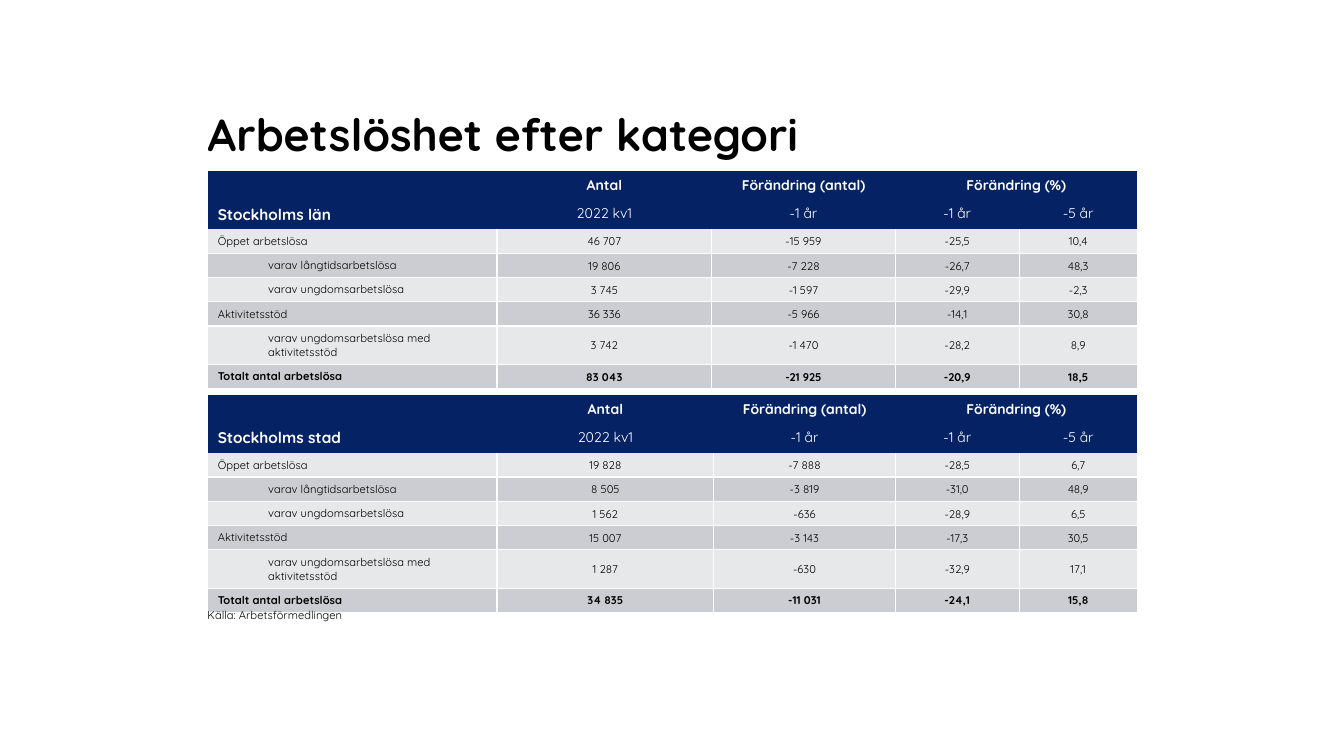
from lxml import etree
from pptx import Presentation
from pptx import util as u
from pptx.dml.color import RGBColor
from pptx.enum import text
from pptx.oxml.ns import qn

NAVY, PALE, GREY, WHITE, BLACK = "052364", "E7E8EA", "CCCDD3", "FFFFFF", "000000"
FONT = "Quicksand"
LEFT, WIDTH = 2.06, 9.22


def style(para, size, color, bold=False):
    for run in para.runs:
        run.font.name, run.font.size, run.font.bold = FONT, u.Pt(size), bold
        run.font.color.rgb = RGBColor.from_string(color)


def border(cell, sides):
    props = cell._tc.get_or_add_tcPr()
    for spot, side in enumerate(sides):
        line = etree.Element(qn("a:ln" + side), w="12700")
        fill = etree.SubElement(line, qn("a:solidFill"))
        etree.SubElement(fill, qn("a:srgbClr"), val=WHITE)
        props.insert(spot, line)


prs = Presentation()
prs.slide_width, prs.slide_height = u.Inches(13.33), u.Inches(7.5)
slide = prs.slides.add_slide(prs.slide_layouts[5])

# Title
title = slide.shapes.title
title.left, title.top = u.Inches(LEFT), u.Inches(0.37)
title.width, title.height = u.Inches(WIDTH), u.Inches(1.22)
frame = title.text_frame
frame.text = "Arbetslöshet efter kategori"
frame.auto_size = text.MSO_AUTO_SIZE.NONE
frame.vertical_anchor = text.MSO_ANCHOR.BOTTOM
frame.margin_left = frame.margin_right = frame.margin_top = frame.margin_bottom = 0
frame.paragraphs[0].alignment = text.PP_ALIGN.LEFT
style(frame.paragraphs[0], 32, BLACK, True)

# Table content: region, top, column widths, figures
heads = ["", "Antal", "Förändring (antal)", "Förändring (%)", ""]
units = ["2022 kv1", "-1 år", "-1 år", "-5 år"]
labels = ["Öppet arbetslösa", "varav långtidsarbetslösa", "varav ungdomsarbetslösa",
          "Aktivitetsstöd", "varav ungdomsarbetslösa med aktivitetsstöd",
          "Totalt antal arbetslösa"]
heights = [0.28, 0.28, 0.24, 0.24, 0.24, 0.24, 0.38, 0.24]
regions = [
    ("Stockholms län", 1.7, [2.87, 2.13, 1.82, 1.23, 1.17], [
        ["46 707", "-15 959", "-25,5", "10,4"],
        ["19 806", "-7 228", "-26,7", "48,3"],
        ["3 745", "-1 597", "-29,9", "-2,3"],
        ["36 336", "-5 966", "-14,1", "30,8"],
        ["3 742", "-1 470", "-28,2", "8,9"],
        ["83 043", "-21 925", "-20,9", "18,5"]]),
    ("Stockholms stad", 3.92, [2.87, 2.15, 1.8, 1.23, 1.17], [
        ["19 828", "-7 888", "-28,5", "6,7"],
        ["8 505", "-3 819", "-31,0", "48,9"],
        ["1 562", "-636", "-28,9", "6,5"],
        ["15 007", "-3 143", "-17,3", "30,5"],
        ["1 287", "-630", "-32,9", "17,1"],
        ["34 835", "-11 031", "-24,1", "15,8"]]),
]

# Tables
for region, top, widths, figures in regions:
    rows = [heads, [region] + units] + [[n] + f for n, f in zip(labels, figures)]
    table = slide.shapes.add_table(len(rows), len(widths), u.Inches(LEFT), u.Inches(top),
                                   u.Inches(WIDTH), u.Inches(sum(heights))).table
    table.first_row = table.horz_banding = False
    # Plain table style without grid
    table._tbl.tblPr.find(qn("a:tableStyleId")).text = "{2D5ABB26-0587-4C30-8999-92F81FD0307C}"
    for col, width in zip(table.columns, widths):
        col.width = u.Inches(width)
    for row, height in zip(table.rows, heights):
        row.height = u.Inches(height)

    for r, row in enumerate(rows):
        for c, value in enumerate(row):
            cell = table.cell(r, c)
            cell.text = value
            para = cell.text_frame.paragraphs[0]
            para.alignment = text.PP_ALIGN.CENTER if c else text.PP_ALIGN.LEFT
            cell.fill.solid()
            if r < 2:
                cell.fill.fore_color.rgb = RGBColor.from_string(NAVY)
                style(para, 11 if r and not c else 10, WHITE, r == 0 or c == 0)
                if not value:
                    etree.SubElement(para._p, qn("a:endParaRPr"), sz="1000")
                continue
            cell.fill.fore_color.rgb = RGBColor.from_string(GREY if r % 2 else PALE)
            style(para, 8, BLACK, r == len(rows) - 1)
            border(cell, "LRTB"[c == 0:] if r > 2 else "LRB"[c == 0:])
            if c:
                cell.vertical_anchor = text.MSO_ANCHOR.MIDDLE
                cell.margin_left = cell.margin_right = cell.margin_top = u.Inches(0.01)
                cell.margin_bottom = 0
            elif value.startswith("varav"):
                para.level = 1
                props = para._p.get_or_add_pPr()
                props.set("marL", str(u.Inches(0.5)))
                props.set("indent", "0")
    table.cell(0, 3).merge(table.cell(0, 4))

# Source line
note = slide.shapes.add_textbox(u.Inches(1.96), u.Inches(5.99), u.Inches(1.64), u.Inches(0.24))
note.text_frame.text = "Källa: Arbetsförmedlingen"
note.text_frame.word_wrap = False
note.text_frame.auto_size = text.MSO_AUTO_SIZE.SHAPE_TO_FIT_TEXT
style(note.text_frame.paragraphs[0], 8, BLACK)

prs.save("out.pptx")
